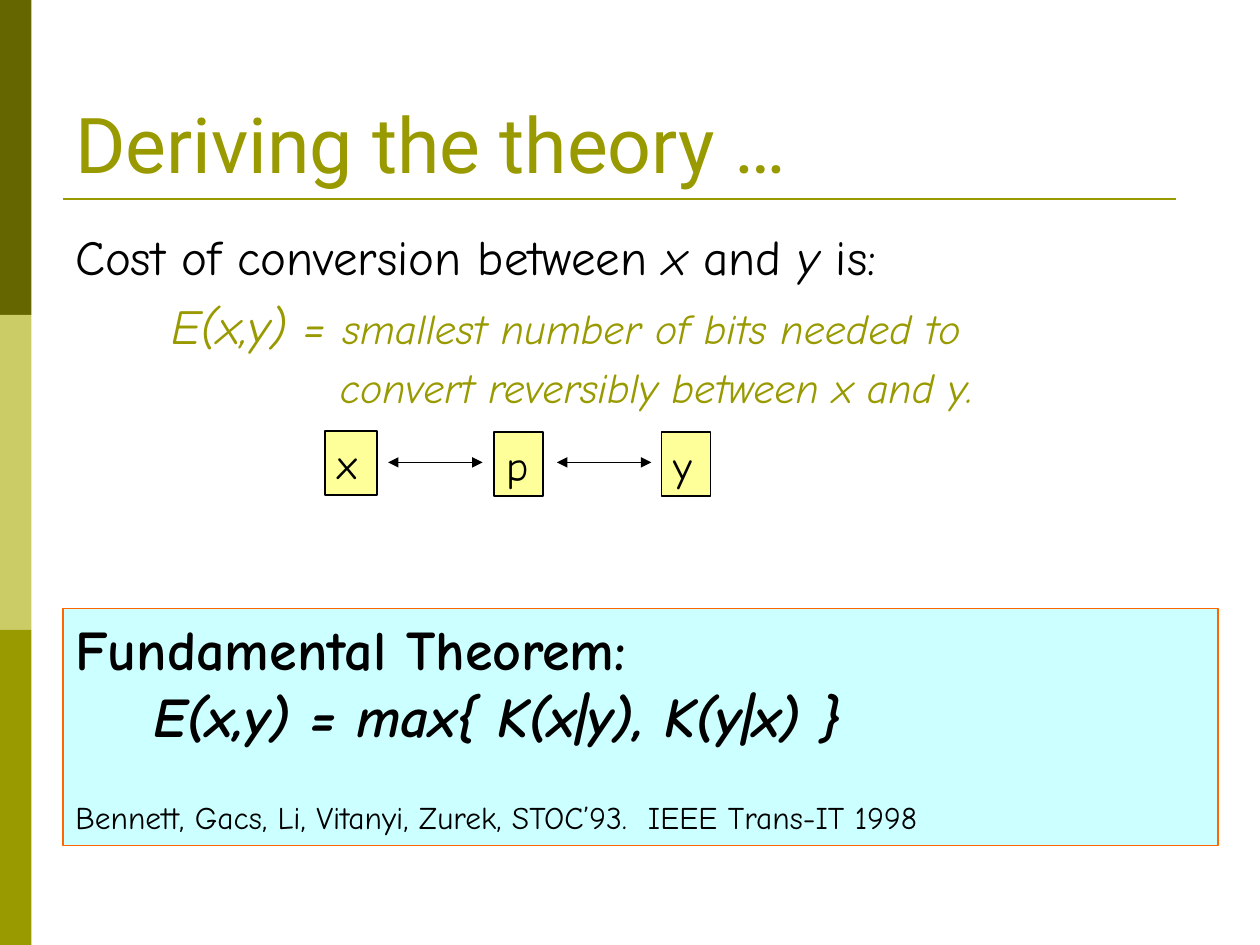
from dataclasses import dataclass

from lxml import etree
from pptx import Presentation
from pptx.dml.color import RGBColor
from pptx.enum.shapes import MSO_CONNECTOR, MSO_SHAPE
from pptx.enum.text import MSO_ANCHOR
from pptx.oxml.ns import qn
from pptx.util import Inches, Pt

RECTANGLE = MSO_SHAPE.RECTANGLE
STRAIGHT = MSO_CONNECTOR.STRAIGHT
TOP, MIDDLE, BOTTOM = MSO_ANCHOR.TOP, MSO_ANCHOR.MIDDLE, MSO_ANCHOR.BOTTOM

BLACK = RGBColor(0x00, 0x00, 0x00)
OLIVE = RGBColor(0x99, 0x99, 0x00)
DARK_OLIVE = RGBColor(0x66, 0x66, 0x00)
PALE_OLIVE = RGBColor(0xCC, 0xCC, 0x66)
CYAN = RGBColor(0xCC, 0xFF, 0xFF)
ORANGE = RGBColor(0xFF, 0x66, 0x00)
YELLOW = RGBColor(0xFF, 0xFF, 0x99)

TITLE_FONT, BODY_FONT = "Roboto", "Comic Neue"


@dataclass
class Span:
    text: str
    size: float
    color: RGBColor = BLACK
    italic: bool = False
    bold: bool = False
    font: str = BODY_FONT


@dataclass
class Para:
    spans: list[Span]
    indent: float = 0
    space_before: float = 0


@dataclass
class Node:
    label: str
    left: float
    top: float
    width: float


def write(box, paras: list[Para], anchor=TOP, wrap: bool = True) -> None:
    frame = box.text_frame
    frame.word_wrap = wrap
    frame.vertical_anchor = anchor
    for index, item in enumerate(paras):
        para = frame.paragraphs[0] if index == 0 else frame.add_paragraph()
        para.space_before = Pt(item.space_before)
        properties = para._p.get_or_add_pPr()
        properties.set("marL", str(Inches(item.indent)))
        properties.set("algn", "l")
        for span in item.spans:
            run = para.add_run()
            run.text = span.text
            run.font.name = span.font
            run.font.size = Pt(span.size)
            run.font.bold = span.bold
            run.font.italic = span.italic
            run.font.color.rgb = span.color


def add_text(page, left: float, top: float, width: float, height: float,
             paras: list[Para], anchor=TOP) -> None:
    box = page.shapes.add_textbox(Inches(left), Inches(top), Inches(width), Inches(height))
    write(box, paras, anchor)


def add_box(page, left: float, top: float, width: float, height: float,
            fill: RGBColor, outline: RGBColor | None = None):
    box = page.shapes.add_shape(RECTANGLE, Inches(left), Inches(top),
                                Inches(width), Inches(height))
    box.shadow.inherit = False
    box.fill.solid()
    box.fill.fore_color.rgb = fill
    if outline is None:
        box.line.fill.background()
    else:
        box.line.color.rgb = outline
        box.line.width = Pt(1)
    return box


def add_rule(page, left: float, right: float, y: float, color: RGBColor,
             width: float, arrows: bool = False) -> None:
    """Draw a horizontal line, with an arrowhead at each end if asked."""
    rule = page.shapes.add_connector(STRAIGHT, Inches(left), Inches(y), Inches(right), Inches(y))
    rule.line.color.rgb = color
    rule.line.width = Pt(width)
    if arrows:
        outline = rule.line._get_or_add_ln()
        for end in ("a:headEnd", "a:tailEnd"):
            etree.SubElement(outline, qn(end), type="triangle")
    etree.SubElement(rule._element.spPr, qn("a:effectLst"))


CONVERSION = [
    Para([Span("Cost of conversion between ", 28), Span("x", 28, italic=True),
          Span(" and ", 28), Span("y", 28, italic=True), Span(" is:", 28)]),
    Para([Span("E(x,y) = ", 28, OLIVE, italic=True),
          Span("smallest number of bits needed to", 24, OLIVE, italic=True)], 0.76, 5.5),
    Para([Span("convert reversibly between x and y.", 24, OLIVE, italic=True)], 2.1, 4.5),
]
THEOREM = [
    Para([Span("Fundamental Theorem:", 32, bold=True)]),
    Para([Span("E(x,y) = max{ K(x|y), K(y|x) }", 32, italic=True, bold=True)], 0.62),
    Para([Span("Bennett, Gacs, Li, Vitanyi, Zurek, STOC’93.  IEEE Trans-IT 1998", 18)],
         space_before=28),
]
NODES = [Node("x", 2.58, 3.42, 0.41), Node("p", 3.92, 3.43, 0.39), Node("y", 5.25, 3.43, 0.39)]
ARROW_STARTS = (3.08, 4.42)
ARROW_LENGTH = 0.75


def main() -> None:
    deck = Presentation()
    deck.slide_width, deck.slide_height = Inches(10), Inches(7.5)
    page = deck.slides.add_slide(deck.slide_layouts[6])

    for index, color in enumerate((DARK_OLIVE, PALE_OLIVE, OLIVE)):
        add_box(page, 0, 2.5 * index, 0.25, 2.5, color)
    add_rule(page, 0.5, 9.33, 1.58, OLIVE, 1.5)

    title = Para([Span("Deriving the theory …", 44, OLIVE, font=TITLE_FONT)])
    add_text(page, 0.5, 0.3, 9, 1.25, [title], BOTTOM)
    add_text(page, 0.5, 1.75, 9, 4.95, CONVERSION)
    write(add_box(page, 0.5, 4.83, 9.17, 1.88, CYAN, ORANGE), THEOREM)

    for node in NODES:
        box = add_box(page, node.left, node.top, node.width, 0.51, YELLOW, BLACK)
        write(box, [Para([Span(node.label, 24)])], MIDDLE, wrap=False)
    for start in ARROW_STARTS:
        add_rule(page, start, start + ARROW_LENGTH, 3.67, BLACK, 1, arrows=True)

    deck.save("out.pptx")


if __name__ == "__main__":
    main()
